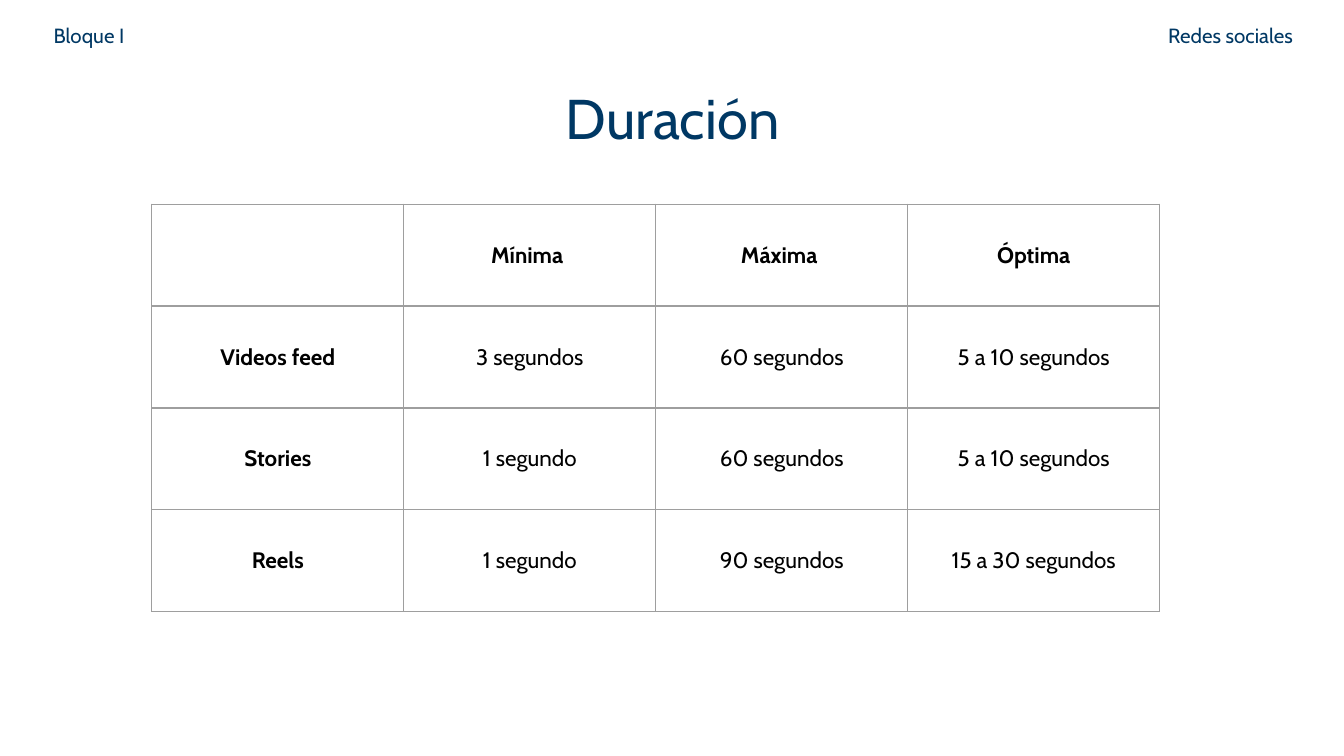
from dataclasses import dataclass

import pptx
import pptx.dml.color
import pptx.enum.text
import pptx.oxml
import pptx.oxml.ns
import pptx.util
from pptx.util import Inches

ALIGN = pptx.enum.text.PP_ALIGN


@dataclass(frozen=True)
class Theme:
    font: str = "Cabin"
    heading: str = "003864"
    body: str = "000000"
    grid: str = "9E9E9E"
    background: str = "FFFFFF"
    label_size: float = 11
    title_size: float = 30
    table_size: float = 12
    grid_width: float = 0.75
    inset: float = 0.1


class SlideBuilder:
    def __init__(self, slide, theme):
        self.slide = slide
        self.theme = theme
        fill = slide.background.fill
        fill.solid()
        fill.fore_color.rgb = pptx.dml.color.RGBColor.from_string(theme.background)

    def style(self, paragraph, size, color, align, bold=False):
        paragraph.alignment = align
        font = paragraph.font
        font.name = self.theme.font
        font.size = pptx.util.Pt(size)
        font.bold = bold
        font.color.rgb = pptx.dml.color.RGBColor.from_string(color)

    def text(self, content, left, top, width, height, size, align):
        box = self.slide.shapes.add_textbox(
            Inches(left), Inches(top), Inches(width), Inches(height))
        frame = box.text_frame
        frame.word_wrap = True
        frame.auto_size = pptx.enum.text.MSO_AUTO_SIZE.SHAPE_TO_FIT_TEXT
        frame.margin_left = frame.margin_right = Inches(self.theme.inset)
        frame.margin_top = frame.margin_bottom = Inches(self.theme.inset)
        frame.text = content
        self.style(frame.paragraphs[0], size, self.theme.heading, align)

    def outline(self, cell):
        """Draw the four borders of a cell, ahead of its fill in the XML."""
        properties = cell._tc.get_or_add_tcPr()
        width = pptx.util.Pt(self.theme.grid_width)
        for position, side in enumerate(("lnL", "lnR", "lnT", "lnB")):
            border = pptx.oxml.parse_xml(
                f'<a:{side} {pptx.oxml.ns.nsdecls("a")} w="{width}">'
                f'<a:solidFill><a:srgbClr val="{self.theme.grid}"/></a:solidFill>'
                f'</a:{side}>')
            properties.insert(position, border)

    def table(self, rows, left, top, width, height):
        """Share the area evenly; bold the first row and the first column."""
        columns = len(rows[0])
        table = self.slide.shapes.add_table(
            len(rows), columns, Inches(left), Inches(top),
            Inches(width), Inches(height)).table
        table.first_row = table.horz_banding = False
        for row_index, row in enumerate(rows):
            for column_index, content in enumerate(row):
                cell = table.cell(row_index, column_index)
                cell.fill.background()
                self.outline(cell)
                cell.vertical_anchor = pptx.enum.text.MSO_ANCHOR.MIDDLE
                cell.margin_left = cell.margin_right = Inches(self.theme.inset)
                cell.margin_top = cell.margin_bottom = Inches(self.theme.inset)
                cell.text = content
                self.style(cell.text_frame.paragraphs[0], self.theme.table_size,
                           self.theme.body, ALIGN.CENTER,
                           bold=row_index == 0 or column_index == 0)


DURATIONS = [
    ("", "Mínima ", "Máxima ", "Óptima"),
    ("Videos feed", "3 segundos", "60 segundos", "5 a 10 segundos"),
    ("Stories", "1 segundo", "60 segundos", "5 a 10 segundos"),
    ("Reels", "1 segundo", "90 segundos", "15 a 30 segundos"),
]


def main():
    presentation = pptx.Presentation()
    presentation.slide_width = Inches(10)
    presentation.slide_height = Inches(10 * 9 / 16)
    theme = Theme()
    slide = presentation.slides.add_slide(presentation.slide_layouts[6])
    builder = SlideBuilder(slide, theme)

    builder.text("Bloque I", 0.3, 0.08, 0.89, 0.39, theme.label_size, ALIGN.LEFT)
    builder.text("Duración", 0.69, 0.52, 8.63, 0.71, theme.title_size, ALIGN.CENTER)
    builder.table(DURATIONS, 1.13, 1.52, 7.5, 3.03)
    builder.text("Redes sociales", 7.59, 0.08, 2.13, 0.39,
                 theme.label_size, ALIGN.RIGHT)

    presentation.save("out.pptx")


if __name__ == "__main__":
    main()
